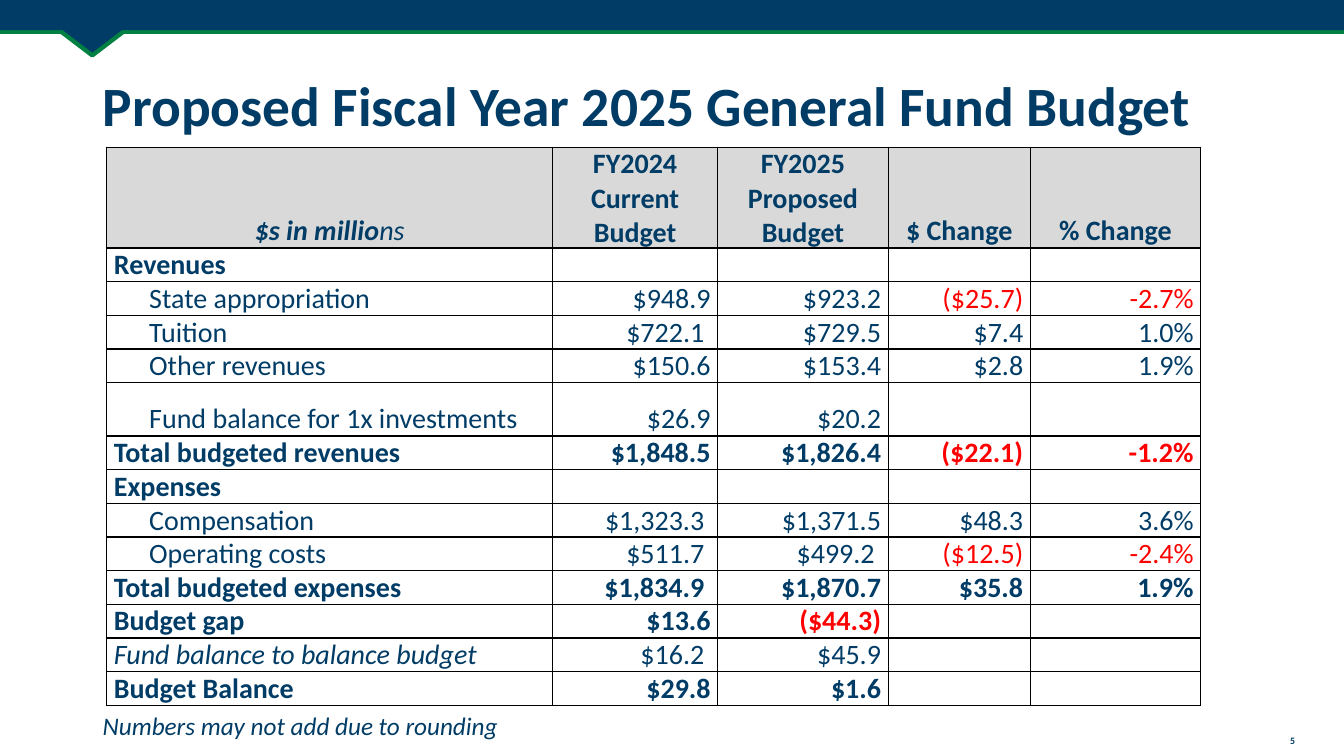
from lxml import etree
from pptx import Presentation
from pptx.dml.color import RGBColor
from pptx.enum import shapes, text
from pptx.oxml import ns
from pptx.util import Inches, Pt

COLORS = {"navy": "003C66", "green": "008042", "red": "FF0000",
          "gray": "D9D9D9", "black": "000000"}
ALIGN = text.PP_ALIGN
ANCHOR = text.MSO_ANCHOR

HEADINGS = ["FY2024 Current Budget", "FY2025 Proposed Budget", "$ Change", "% Change"]
# Kind of row, label, then one value per heading
BUDGET = [
    ("total", "Revenues"),
    ("item", "State appropriation", "$948.9", "$923.2", "($25.7)", "-2.7%"),
    ("item", "Tuition", "$722.1 ", "$729.5", "$7.4", "1.0%"),
    ("item", "Other revenues", "$150.6", "$153.4", "$2.8", "1.9%"),
    ("item", "Fund balance for 1x investments", "$26.9", "$20.2"),
    ("total", "Total budgeted revenues", "$1,848.5", "$1,826.4", "($22.1)", "-1.2%"),
    ("total", "Expenses"),
    ("item", "Compensation", "$1,323.3 ", "$1,371.5", "$48.3", "3.6%"),
    ("item", "Operating costs", "$511.7 ", "$499.2 ", "($12.5)", "-2.4%"),
    ("total", "Total budgeted expenses", "$1,834.9 ", "$1,870.7", "$35.8", "1.9%"),
    ("total", "Budget gap", "$13.6", "($44.3)"),
    ("note", "Fund balance to balance budget", "$16.2 ", "$45.9"),
    ("total", "Budget Balance", "$29.8", "$1.6"),
]
COLUMN_WIDTHS = [0.35, 4.07, 1.64, 1.69, 1.41, 1.69]
HEADER_HEIGHT, ROW_HEIGHT, TALL_HEIGHT = 0.96, 0.32, 0.53
TALL_LABEL = "Fund balance for 1x investments"


def color(name):
    return RGBColor.from_string(COLORS[name])


def write(paragraph, words, size=20, bold=False, italic=False, ink="navy",
          align=ALIGN.LEFT, spacing=None):
    """Add one formatted run to a paragraph."""
    paragraph.alignment = align
    if spacing:
        paragraph.line_spacing = spacing
    run = paragraph.add_run()
    run.text = words
    font = run.font
    font.name, font.size, font.bold, font.italic = "Calibri", Pt(size), bold, italic
    font.color.rgb = color(ink)


class BudgetSlide:
    def __init__(self, deck):
        self.slide = deck.slides.add_slide(deck.slide_layouts[6])
        self.shapes = self.slide.shapes

    def rule(self, x1, y1, x2, y2, ink, width):
        line = self.shapes.add_connector(
            shapes.MSO_CONNECTOR.STRAIGHT, *map(Inches, (x1, y1, x2, y2)))
        line.line.color.rgb = color(ink)
        line.line.width = Pt(width)
        etree.SubElement(line._element.spPr, ns.qn("a:effectLst"))

    def shape(self, kind, box, fill, outline=None, rotation=0):
        shape = self.shapes.add_shape(kind, *map(Inches, box))
        shape.shadow.inherit = False
        shape.rotation = rotation
        shape.fill.solid()
        shape.fill.fore_color.rgb = color(fill)
        if outline:
            shape.line.color.rgb = color(outline)
            shape.line.width = Pt(3)
        else:
            shape.line.fill.background()

    def label(self, words, box, anchor=ANCHOR.TOP, **style):
        frame = self.shapes.add_textbox(*map(Inches, box)).text_frame
        frame.word_wrap = True
        frame.vertical_anchor = anchor
        write(frame.paragraphs[0], words, **style)

    def table(self, left, top, widths, heights):
        frame = self.shapes.add_table(
            len(heights), len(widths), Inches(left), Inches(top),
            Inches(sum(widths)), Inches(sum(heights)))
        table = frame.table
        table.first_row = table.horz_banding = False
        for column, width in zip(table.columns, widths):
            column.width = Inches(width)
        for row, height in zip(table.rows, heights):
            row.height = Inches(height)
        return table

    def cell(self, cell, sides="LRTB", fill=None):
        """Set the margins, borders and fill of a cell."""
        cell.margin_left = cell.margin_right = Inches(0.07)
        cell.margin_top = cell.margin_bottom = 0
        cell.vertical_anchor = ANCHOR.BOTTOM
        cell.text_frame.paragraphs[0].font.size = Pt(20)
        properties = cell._tc.get_or_add_tcPr()
        for side in "LRTB":
            shown = side in sides
            border = etree.SubElement(properties, ns.qn(f"a:ln{side}"),
                                      w=str(Pt(1) if shown else 0))
            if shown:
                paint = etree.SubElement(border, ns.qn("a:solidFill"))
                etree.SubElement(paint, ns.qn("a:srgbClr"), val=COLORS["black"])
            else:
                etree.SubElement(border, ns.qn("a:noFill"))
        if fill:
            cell.fill.solid()
            cell.fill.fore_color.rgb = color(fill)
        else:
            cell.fill.background()


def add_budget(page):
    heights = [HEADER_HEIGHT] + [
        TALL_HEIGHT if row[1] == TALL_LABEL else ROW_HEIGHT for row in BUDGET]
    budget = page.table(1.06, 1.46, COLUMN_WIDTHS, heights)

    # Cell borders and fills; the indent column is open towards its label
    for r in range(len(heights)):
        is_item = r > 0 and BUDGET[r - 1][0] == "item"
        for c in range(len(COLUMN_WIDTHS)):
            sides = {0: "LTB", 1: "RTB"}.get(c, "LRTB") if is_item else "LRTB"
            page.cell(budget.cell(r, c), sides, None if r else "gray")
        if not is_item:
            budget.cell(r, 0).merge(budget.cell(r, 1))

    # Headings
    units = budget.cell(0, 0).text_frame.paragraphs[0]
    write(units, "$s in millio", bold=True, italic=True, align=ALIGN.CENTER)
    write(units, "ns", italic=True, align=ALIGN.CENTER)
    for c, heading in enumerate(HEADINGS, 2):
        write(budget.cell(0, c).text_frame.paragraphs[0], heading,
              bold=True, align=ALIGN.CENTER)

    # Labels and values, with negative values in red
    for r, (kind, name, *values) in enumerate(BUDGET, 1):
        bold = kind == "total"
        label = budget.cell(r, 1 if kind == "item" else 0)
        write(label.text_frame.paragraphs[0], name, bold=bold, italic=kind == "note")
        for c, value in enumerate(values, 2):
            write(budget.cell(r, c).text_frame.paragraphs[0], value, bold=bold,
                  ink="red" if value[0] in "(-" else "navy", align=ALIGN.RIGHT)


def main():
    deck = Presentation()
    deck.slide_width, deck.slide_height = Inches(13.33), Inches(7.5)
    page = BudgetSlide(deck)

    # Banner with its notch
    page.rule(0, 0.32, 13.33, 0.32, "green", 3)
    page.shape(shapes.MSO_SHAPE.ISOSCELES_TRIANGLE, (0.39, 0.15, 1.05, 0.4),
               "navy", outline="green", rotation=180)
    page.shape(shapes.MSO_SHAPE.RECTANGLE, (0, -0.1, 13.33, 0.4), "navy")

    # Page number and title
    page.label("5", (12.57, 7.24, 0.5, 0.22), size=7, bold=True, align=ALIGN.CENTER)
    page.label("Proposed Fiscal Year 2025 General Fund Budget", (0.92, 0.5, 11.5, 1.16),
               anchor=ANCHOR.MIDDLE, size=39.6, bold=True, spacing=0.9)

    # Budget table and its footnote
    add_budget(page)
    page.label("Numbers may not add due to rounding", (0.92, 7, 5.26, 0.4),
               size=18, italic=True)

    deck.save("out.pptx")


if __name__ == "__main__":
    main()
